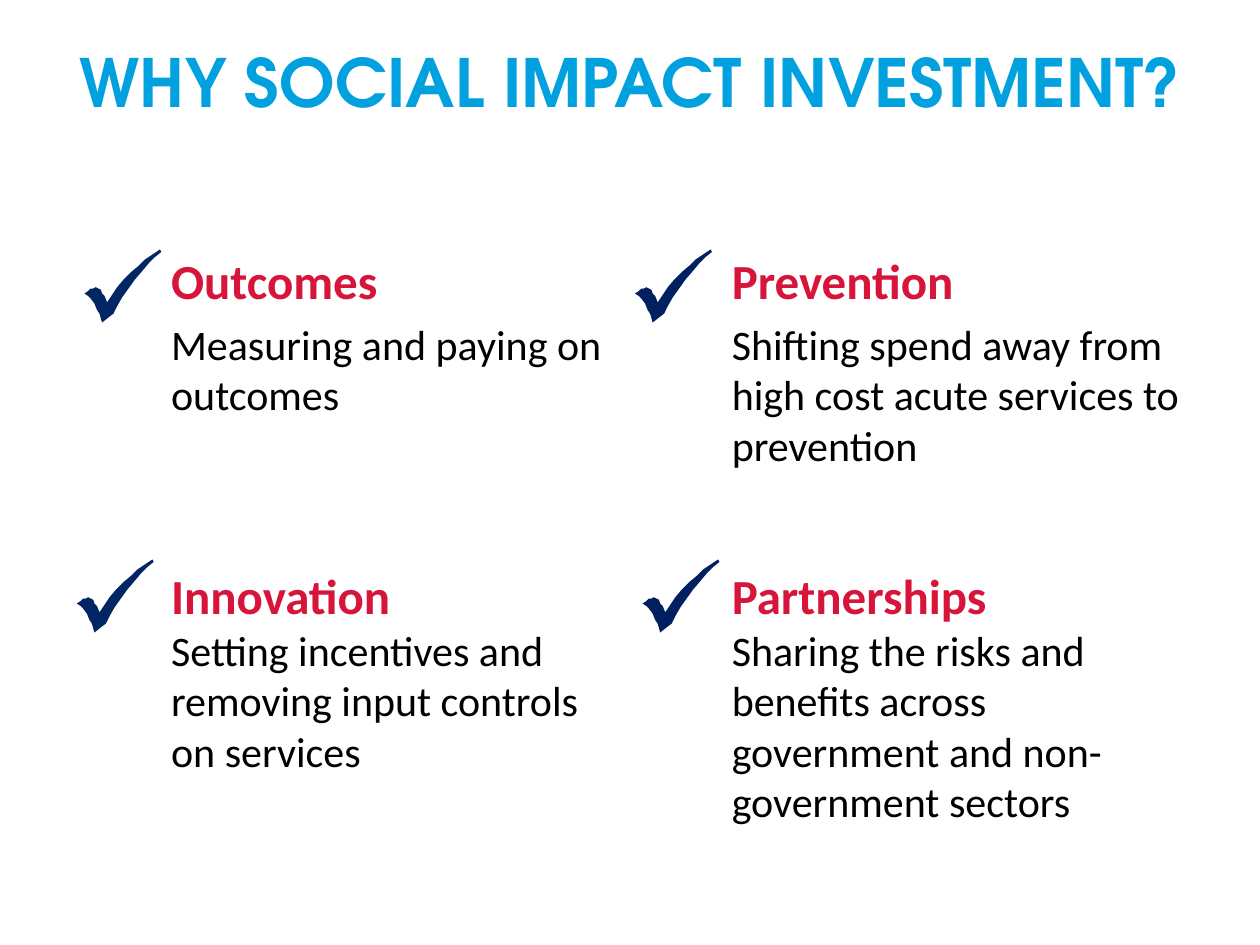
from pptx import Presentation
from pptx import util as u
from pptx.dml.color import RGBColor
from pptx.enum import text

# The slide is a grid of 100 columns by 75 rows of square cells.
WIDTH, HEIGHT = u.Inches(10), u.Inches(7.5)
CELL = WIDTH // 100
TITLE_BLUE, RED, BLACK = "00A1DE", "D7153A", "000000"
NAVY, DARK_NAVY = "002664", "002060"

COLUMNS = [(12.6, 36.6), (57.1, 38.6)]  # left, width
ROWS = [(19.4, 22.5, 0.4, 5), (44.4, 21.9, 0, 0)]  # top, height, tick drop, gap in points

# heading, body, column, row, tick distance left of the text box, tick colour
REASONS = [
    ("Outcomes", "Measuring and paying on outcomes", 0, 0, 5.9, NAVY),
    ("Prevention", "Shifting spend away from high cost acute services to prevention",
     1, 0, 6.7, DARK_NAVY),
    ("Innovation", "Setting incentives and removing input controls on services",
     0, 1, 6.5, NAVY),
    ("Partnerships", "Sharing the risks and benefits across government and "
     "non-government sectors", 1, 1, 6.1, DARK_NAVY),
]

# Tick outline in tenths of a cell
TICK = [
    (60, 0), (61, 2), (56, 6), (51, 11), (46, 17), (40, 24), (35, 31), (30, 38),
    (26, 45), (23, 51), (19, 54), (14, 58), (12, 51), (10, 48), (8, 43), (5, 39),
    (3, 37), (0, 35), (3, 33), (5, 31), (7, 31), (9, 30), (11, 31), (13, 32),
    (14, 35), (16, 37), (18, 42), (22, 36), (26, 30), (31, 24), (37, 18),
    (43, 13), (48, 8), (54, 4),
]


def color(value):
    return RGBColor.from_string(value)


def add_text_box(page, left, top, width, height):
    box = page.shapes.add_textbox(*(round(n * CELL) for n in (left, top, width, height)))
    box.text_frame.word_wrap = True
    return box.text_frame


def style(para, font_name, size, shade, bold):
    for span in para.runs:
        span.font.name = font_name
        span.font.size = u.Pt(size)
        span.font.bold = bold
        span.font.color.rgb = color(shade)


def add_title(page, left, top, width, height):
    frame = add_text_box(page, left, top, width, height)
    frame.vertical_anchor = text.MSO_ANCHOR.MIDDLE
    frame.text = "WHY SOCIAL IMPACT INVESTMENT?"
    para = frame.paragraphs[0]
    para.alignment = text.PP_ALIGN.CENTER
    style(para, "TeX Gyre Adventor", 38, TITLE_BLUE, True)


def add_tick(page, left, top, shade):
    builder = page.shapes.build_freeform(*TICK[0], scale=CELL / 10)
    builder.add_line_segments(TICK[1:], close=True)
    tick = builder.convert_to_shape(round(left * CELL), round(top * CELL))
    tick.shadow.inherit = False
    tick.fill.solid()
    tick.fill.fore_color.rgb = color(shade)
    tick.line.fill.background()


def add_reason(page, left, top, width, height, heading, body, gap):
    frame = add_text_box(page, left, top, width, height)
    frame.text = heading
    style(frame.paragraphs[0], "Calibri", 28, RED, True)
    para = frame.add_paragraph()
    para.text = body
    para.space_before = u.Pt(gap)
    style(para, "Calibri", 24, BLACK, False)


def main():
    deck = Presentation()
    deck.slide_width, deck.slide_height = WIDTH, HEIGHT
    page = deck.slides.add_slide(deck.slide_layouts[6])
    add_title(page, 3.8, 2.9, 92.5, 7)
    for heading, body, column, row, tick_offset, shade in REASONS:
        left, width = COLUMNS[column]
        top, height, tick_drop, gap = ROWS[row]
        add_tick(page, left - tick_offset, top + tick_drop, shade)
        add_reason(page, left, top, width, height, heading, body, gap)
    deck.save("out.pptx")


if __name__ == "__main__":
    main()
